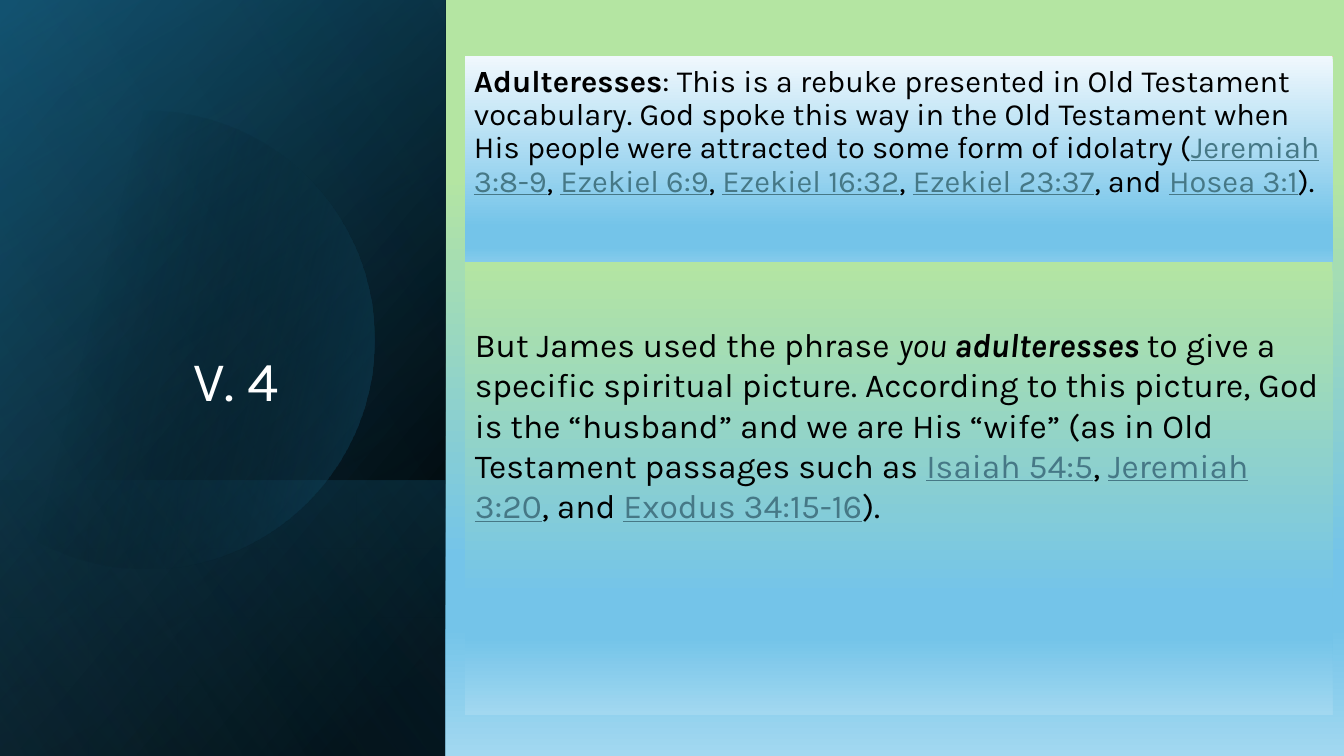
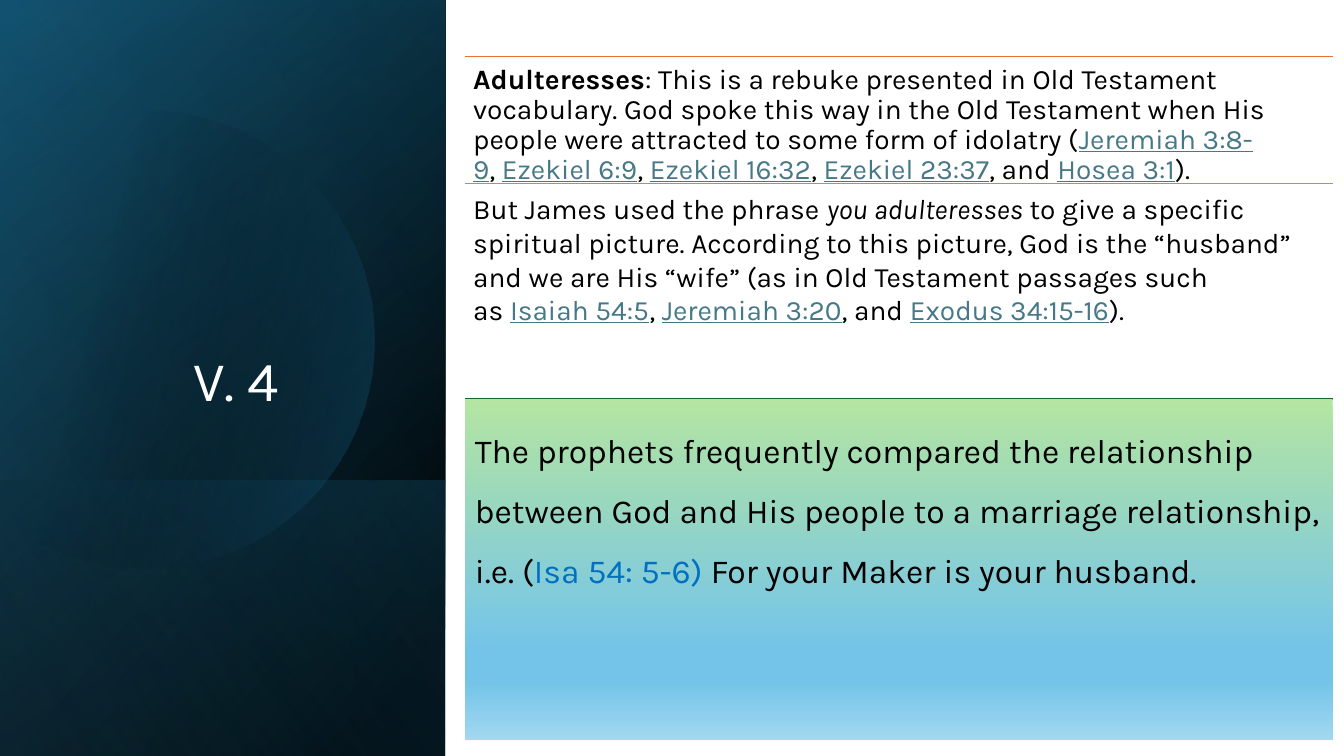
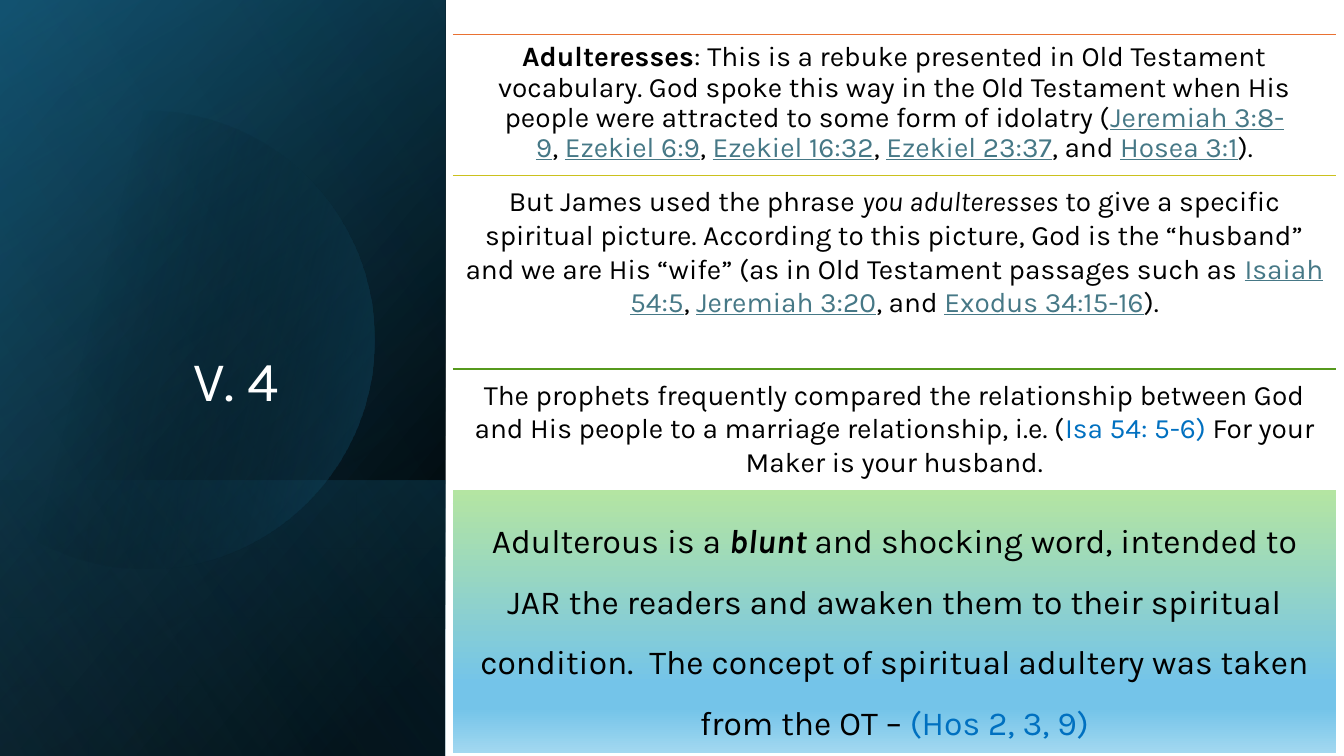
"""Build three Bible study slides on James verse 4 with a shared dark side panel."""
from math import cos, radians, sin

from lxml.etree import SubElement
from pptx import Presentation
from pptx.dml.color import RGBColor
from pptx.enum.shapes import MSO_CONNECTOR, MSO_SHAPE
from pptx.enum.text import MSO_ANCHOR, PP_ALIGN
from pptx.oxml.ns import qn
from pptx.util import Pt

FONT = "Karla"
COLORS = {
    "text": "000000", "title": "FFFFFF", "paper": "FFFFFF", "link": "467886", "ref": "0070C0",
    "orange": "E97132", "olive": "8EB21E", "gold": "CBC11E", "leaf": "56991D", "green": "196B24",
    "black": "000000", "navy": "104862", "teal": "156082", "sky": "46B1E1",
    "mint": "B4E5A2", "ice": "F0F8FD", "blue": "74C4E9", "pale": "A2D8F0",
}
BLUES = [(74, "blue", 100), (83, "blue", 100), (100, "pale", 100)]
MEADOW = [(0, "mint", 100)] + BLUES
FROST = [(0, "ice", 100)] + BLUES
BACKDROP = [(23, "mint", 100)] + BLUES

PANEL_W, PANEL_H = 318, 540
LAYERS = [
    (540, 50, [(8, "black", 100), (100, "navy", 100)]),
    (540, 30, [(0, "black", 0), (99, "teal", 46)]),
    (197, 130, [(2, "teal", 29), (100, "black", 30)]),
    (540, 120, [(0, "black", 0), (99, "sky", 11)]),
]
CIRCLE_X, CIRCLE_Y, CIRCLE_R = 104.4, 242.6, 163.4
CIRCLE_FILL = [(29, "black", 0), (100, "teal", 43)]

ADULTERESSES = [
    ("Adulteresses", "b"),
    (": This is a rebuke presented in Old Testament vocabulary. God spoke this way in the Old "
     "Testament when His people were attracted to some form of idolatry (", ""),
    ("Jeremiah 3:8-9", "link"), (",~", ""), ("Ezekiel 6:9", "link"), (",~", ""),
    ("Ezekiel 16:32", "link"), (",~", ""), ("Ezekiel 23:37", "link"), (", and~", ""),
    ("Hosea 3:1", "link"), (").", ""),
]
JAMES_START = [("But James used the phrase~", "")]
JAMES_END = [
    ("to give a specific spiritual picture. According to this picture, God is the “husband” and "
     "we are His “wife” (as in Old Testament passages such as~", ""),
    ("Isaiah 54:5", "link"), (",~", ""), ("Jeremiah 3:20", "link"), (", and~", ""),
    ("Exodus 34:15-16", "link"), (").", ""),
]
JAMES_BOLD = JAMES_START + [("you ", "i"), ("adulteresses~", "bi")] + JAMES_END
JAMES = JAMES_START + [("you adulteresses", "i"), ("~", "")] + JAMES_END
PROPHETS = [
    ("The prophets frequently compared the relationship between God and His people to a marriage "
     "relationship, i.e. (", ""),
    ("Isa 54: 5-6) ", "ref"), ("For your Maker is your husband.", ""),
]
BLUNT = [
    ("Adulterous is a ", ""), ("blunt ", "bi"),
    ("and shocking word, intended to JAR the readers and awaken them to their spiritual "
     "condition.  The concept of spiritual adultery was taken from the OT – ", ""),
    ("(Hos 2, 3, 9)", "ref"),
]

SLIDES = [
    dict(backdrop=BACKDROP, left=332, width=620, align=PP_ALIGN.LEFT,
         rules=[(40.3, "orange")],
         blocks=[(40.3, 164.2, 22, 0.9, 0, FROST, ADULTERESSES),
                 (187.2, 323.3, 24, 1, 37, MEADOW, JAMES_BOLD)]),
    dict(backdrop=None, left=332, width=620, align=PP_ALIGN.LEFT,
         rules=[(40.3, "orange"), (131, "olive"), (285.1, "green")],
         blocks=[(40.3, 90.7, 20, 0.9, 0, None, ADULTERESSES),
                 (131, 154.8, 20, 1, 0, None, JAMES),
                 (285.1, 243.4, 24, 1.5, 0, MEADOW, PROPHETS)]),
    dict(backdrop=None, left=323.5, width=630.8, align=PP_ALIGN.CENTER,
         rules=[(24.5, "orange"), (125.3, "gold"), (263.5, "leaf"), (360, "green")],
         blocks=[(24.5, 100.8, 20, 0.9, 0, None, ADULTERESSES),
                 (125.3, 139, 20, 1, 0, None, JAMES),
                 (263.5, 96.5, 20, 1, 0, None, PROPHETS),
                 (350, 188, 24, 1.5, 0, MEADOW, BLUNT)]),
]


def set_gradient(fill, element, stops, angle):
    fill.gradient()
    fill.gradient_angle = 360 - angle
    gs_list = element.find(".//" + qn("a:gsLst"))
    for gs in list(gs_list):
        gs_list.remove(gs)
    for pos, color, alpha in stops:
        gs = SubElement(gs_list, qn("a:gs"), pos=str(pos * 1000))
        clr = SubElement(gs, qn("a:srgbClr"), val=COLORS[color])
        if alpha < 100:
            SubElement(clr, qn("a:alpha"), val=str(alpha * 1000))


def write_text(tf, runs, size, spacing, align, color):
    tf.word_wrap = True
    p = tf.paragraphs[0]
    p.alignment = align
    p.line_spacing = spacing
    p.font.name = FONT
    p.font.size = Pt(size)
    p.font.color.rgb = RGBColor.from_string(COLORS[color])
    for text, style in runs:
        r = p.add_run()
        r.text = text.replace("~", chr(160))
        if style in ("link", "ref"):
            r.font.color.rgb = RGBColor.from_string(COLORS[style])
            r.font.underline = style == "link"
        else:
            r.font.color.rgb = RGBColor.from_string(COLORS[color])
            r.font.bold = "b" in style
            r.font.italic = "i" in style


prs = Presentation()
prs.slide_width, prs.slide_height = Pt(960), Pt(540)

for page in SLIDES:
    s = prs.slides.add_slide(prs.slide_layouts[6])
    if page["backdrop"]:
        set_gradient(s.background.fill, s.element, page["backdrop"], 90)
    else:
        s.background.fill.solid()
        s.background.fill.fore_color.rgb = RGBColor.from_string(COLORS["paper"])

    for height, angle, stops in LAYERS:
        sp = s.shapes.add_shape(
            MSO_SHAPE.RECTANGLE, Pt((PANEL_W - height) / 2),
            Pt(PANEL_H - (height + PANEL_W) / 2), Pt(height), Pt(PANEL_W))
        sp.rotation = 90
        sp.element.spPr.find(qn("a:xfrm")).set("flipH", "1")
        sp.shadow.inherit = False
        sp.line.fill.background()
        set_gradient(sp.fill, sp.element, stops, angle)

    arc = [(CIRCLE_X + CIRCLE_R * cos(radians(a)), CIRCLE_Y + CIRCLE_R * sin(radians(a)))
           for a in range(-129, 130, 3)]
    builder = s.shapes.build_freeform(0, round(arc[0][1] * 100), scale=Pt(1) / 100)
    builder.add_line_segments([(round(x * 100), round(y * 100)) for x, y in arc]
                              + [(0, round(arc[-1][1] * 100))])
    sp = builder.convert_to_shape()
    sp.shadow.inherit = False
    sp.line.fill.background()
    set_gradient(sp.fill, sp.element, CIRCLE_FILL, 14)

    title = s.shapes.add_textbox(Pt(46), Pt(132.5), Pt(245.5), Pt(166.3))
    title.text_frame.vertical_anchor = MSO_ANCHOR.BOTTOM
    write_text(title.text_frame, [("V. 4", "")], 40, 0.9, PP_ALIGN.CENTER, "title")

    left, width = page["left"], page["width"]
    for y, color in page["rules"]:
        rule = s.shapes.add_connector(
            MSO_CONNECTOR.STRAIGHT, Pt(left), Pt(y), Pt(left + width), Pt(y))
        rule.line.color.rgb = RGBColor.from_string(COLORS[color])
        rule.line.width = Pt(1)
        SubElement(rule.element.spPr, qn("a:effectLst"))

    for top, height, size, spacing, drop, stops, runs in page["blocks"]:
        box = Pt(left), Pt(top), Pt(width), Pt(height)
        if stops:
            sp = s.shapes.add_shape(MSO_SHAPE.RECTANGLE, *box)
            sp.shadow.inherit = False
            sp.line.fill.background()
            set_gradient(sp.fill, sp.element, stops, 90)
        else:
            sp = s.shapes.add_textbox(*box)
        tf = sp.text_frame
        tf.vertical_anchor = MSO_ANCHOR.TOP
        tf.margin_left = tf.margin_right = tf.margin_bottom = Pt(size * 0.3)
        tf.margin_top = Pt(size * 0.3 + drop)
        write_text(tf, runs, size, spacing, page["align"], "text")

prs.save("out.pptx")
